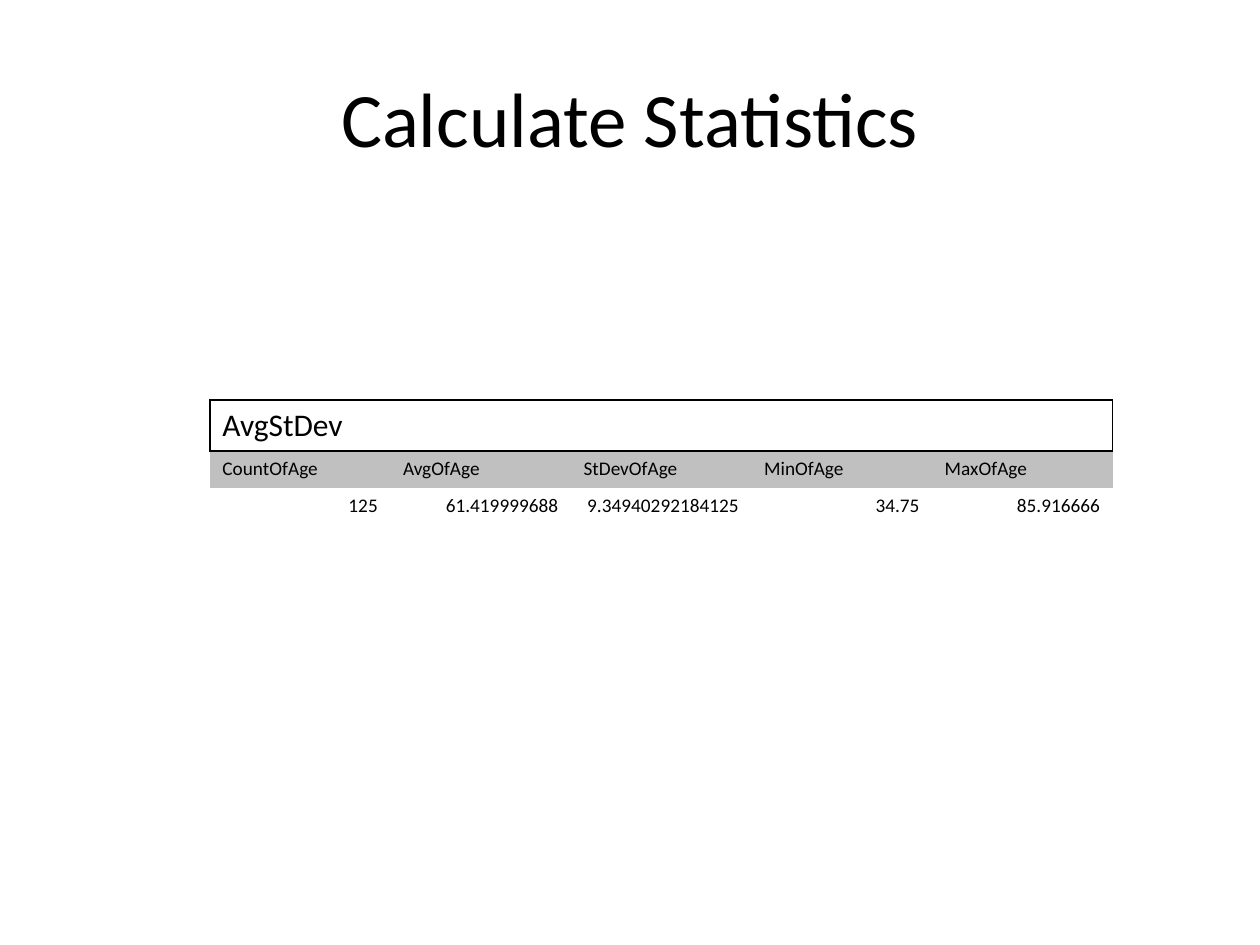
"""Build a slide with a table of age statistics."""
import lxml.etree
import pptx
import pptx.dml.color
import pptx.enum.text
import pptx.oxml.ns
import pptx.util

Cm = pptx.util.Cm
Pt = pptx.util.Pt
ALIGN = pptx.enum.text.PP_ALIGN
MIDDLE = pptx.enum.text.MSO_ANCHOR.MIDDLE
NO_STYLE = "{2D5ABB26-0587-4C30-8999-92F81FD0307C}"


def color(value):
    return pptx.dml.color.RGBColor.from_string(value)


class SlideBuilder:
    font = "Calibri"
    ink = "000000"

    def __init__(self, slide):
        self.slide = slide

    def set_text(self, frame, text, size, align):
        paragraph = frame.paragraphs[0]
        paragraph.text = text
        paragraph.alignment = align
        paragraph.font.name = self.font
        paragraph.font.size = Pt(size)
        paragraph.font.color.rgb = color(self.ink)

    def title(self, text, left, top, width, height):
        shape = self.slide.shapes.add_textbox(Cm(left), Cm(top), Cm(width), Cm(height))
        shape.text_frame.word_wrap = True
        shape.text_frame.vertical_anchor = MIDDLE
        self.set_text(shape.text_frame, text, 44, ALIGN.CENTER)

    def table(self, left, top, width, heights, columns):
        shape = self.slide.shapes.add_table(
            len(heights), columns, Cm(left), Cm(top), Cm(width), Cm(sum(heights)))
        table = shape.table
        table.first_row = table.horz_banding = False
        table._tbl.tblPr.find(pptx.oxml.ns.qn("a:tableStyleId")).text = NO_STYLE
        for row, height in zip(table.rows, heights):
            row.height = Cm(height)
        return table

    def cell(self, cell, text, size, fill, align=ALIGN.LEFT, anchor=None):
        cell.fill.solid()
        cell.fill.fore_color.rgb = color(fill)
        cell.vertical_anchor = anchor
        self.set_text(cell.text_frame, text, size, align)

    def borders(self, cell, sides):
        properties = cell._tc.get_or_add_tcPr()
        for side in sides:
            line = lxml.etree.SubElement(
                properties, pptx.oxml.ns.qn(f"a:ln{side}"), w=str(Pt(1)))
            fill = lxml.etree.SubElement(line, pptx.oxml.ns.qn("a:solidFill"))
            lxml.etree.SubElement(fill, pptx.oxml.ns.qn("a:srgbClr"), val=self.ink)


def main():
    presentation = pptx.Presentation()
    presentation.slide_width = Cm(25.4)
    presentation.slide_height = Cm(19.05)
    builder = SlideBuilder(presentation.slides.add_slide(presentation.slide_layouts[6]))
    builder.title("Calculate Statistics", 1.27, 0.76, 22.86, 3.18)

    statistics = [
        ("CountOfAge", "125"),
        ("AvgOfAge", "61.419999688"),
        ("StDevOfAge", "9.34940292184125"),
        ("MinOfAge", "34.75"),
        ("MaxOfAge", "85.916666"),
    ]
    last = len(statistics) - 1
    table = builder.table(4.23, 8.06, 18.2, [1.03, 0.74, 0.74], len(statistics))
    caption = table.cell(0, 0)
    caption.merge(table.cell(0, last))
    builder.borders(caption, "LRTB")
    for column in range(1, last):
        builder.borders(table.cell(0, column), "T")
    builder.borders(table.cell(0, last), "RT")
    builder.cell(caption, "AvgStDev", 18, "FFFFFF", anchor=MIDDLE)
    for column, (name, value) in enumerate(statistics):
        builder.cell(table.cell(1, column), name, 11, "C0C0C0", anchor=MIDDLE)
        builder.cell(table.cell(2, column), value, 11, "FFFFFF", ALIGN.RIGHT)

    presentation.save("out.pptx")


if __name__ == "__main__":
    main()
